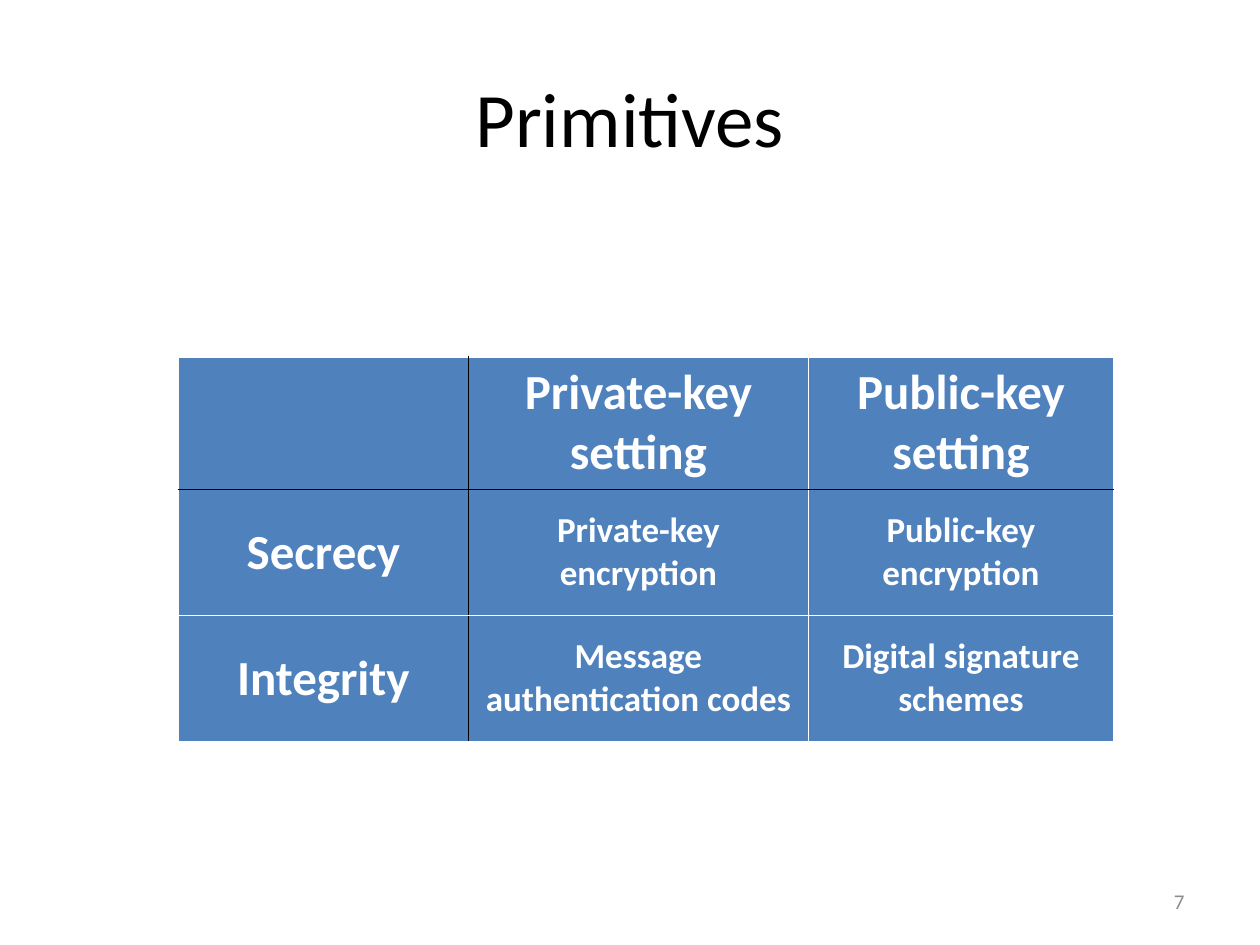
"""Builds a slide that sorts cryptographic primitives by goal and key setting."""
from dataclasses import dataclass

from lxml import etree
from pptx import Presentation
from pptx import util as u
from pptx.dml.color import RGBColor
from pptx.enum import text
from pptx.oxml.ns import qn

TITLE = "Primitives"
PAGE_NUMBER = "7"
PRIMITIVES = [
    ["", "Private-key setting", "Public-key setting"],
    ["Secrecy", "Private-key encryption", "Public-key encryption"],
    ["Integrity", "Message authentication codes", "Digital signature schemes"],
]
COLUMN_WIDTHS = [165.6, 194.4, 174.24]
ROW_HEIGHT = 72
TABLE_LEFT, TABLE_TOP = 102, 204


@dataclass(frozen=True)
class Theme:
    font: str = "Calibri"
    black: str = "000000"
    white: str = "FFFFFF"
    blue: str = "4F81BD"
    grey: str = "8C8C8C"
    title: int = 44
    heading: int = 28
    body: int = 20
    small: int = 12
    rule: int = 1


THEME = Theme()


def write(frame, words, size, color, align, bold=False):
    frame.word_wrap = True
    frame.vertical_anchor = text.MSO_ANCHOR.MIDDLE
    para = frame.paragraphs[0]
    para.alignment = align
    span = para.add_run()
    span.text = words
    span.font.name = THEME.font
    span.font.size = u.Pt(size)
    span.font.bold = bold
    span.font.color.rgb = RGBColor.from_string(color)


def place(shape, left, top, width, height):
    shape.left, shape.top = u.Pt(left), u.Pt(top)
    shape.width, shape.height = u.Pt(width), u.Pt(height)


def set_borders(cell, colors):
    properties = cell._tc.get_or_add_tcPr()
    for index, (side, color) in enumerate(colors.items()):
        line = etree.Element(qn(f"a:ln{side}"), w=str(u.Pt(THEME.rule)))
        fill = etree.SubElement(line, qn("a:solidFill"))
        etree.SubElement(fill, qn("a:srgbClr"), val=color)
        properties.insert(index, line)


def add_primitives_table(page):
    frame = page.shapes.add_table(
        len(PRIMITIVES), len(COLUMN_WIDTHS), u.Pt(TABLE_LEFT), u.Pt(TABLE_TOP),
        u.Pt(sum(COLUMN_WIDTHS)), u.Pt(ROW_HEIGHT * len(PRIMITIVES)))
    table = frame.table
    for column, width in zip(table.columns, COLUMN_WIDTHS):
        column.width = u.Pt(width)
    for r, entries in enumerate(PRIMITIVES):
        table.rows[r].height = u.Pt(ROW_HEIGHT)
        for c, words in enumerate(entries):
            cell = table.cell(r, c)
            cell.fill.solid()
            cell.fill.fore_color.rgb = RGBColor.from_string(THEME.blue)
            cell.vertical_anchor = text.MSO_ANCHOR.MIDDLE
            set_borders(cell, {
                "L": THEME.black if c == 1 else THEME.white,
                "R": THEME.black if c == 0 else THEME.white,
                "T": THEME.black if r == 1 else THEME.white,
                "B": THEME.black if r == 0 else THEME.white,
            })
            if words:
                size = THEME.body if r and c else THEME.heading
                write(cell.text_frame, words, size, THEME.white,
                      text.PP_ALIGN.CENTER, bold=True)


def main():
    deck = Presentation()
    deck.slide_width, deck.slide_height = u.Pt(720), u.Pt(540)
    page = deck.slides.add_slide(deck.slide_layouts[5])

    title = page.shapes.title
    place(title, 36, 21.6, 648, 90)
    write(title.text_frame, TITLE, THEME.title, THEME.black, text.PP_ALIGN.CENTER)

    add_primitives_table(page)

    number = page.shapes.add_textbox(u.Pt(516), u.Pt(500.5), u.Pt(168), u.Pt(28.75))
    write(number.text_frame, PAGE_NUMBER, THEME.small, THEME.grey, text.PP_ALIGN.RIGHT)

    deck.save("out.pptx")


if __name__ == "__main__":
    main()
